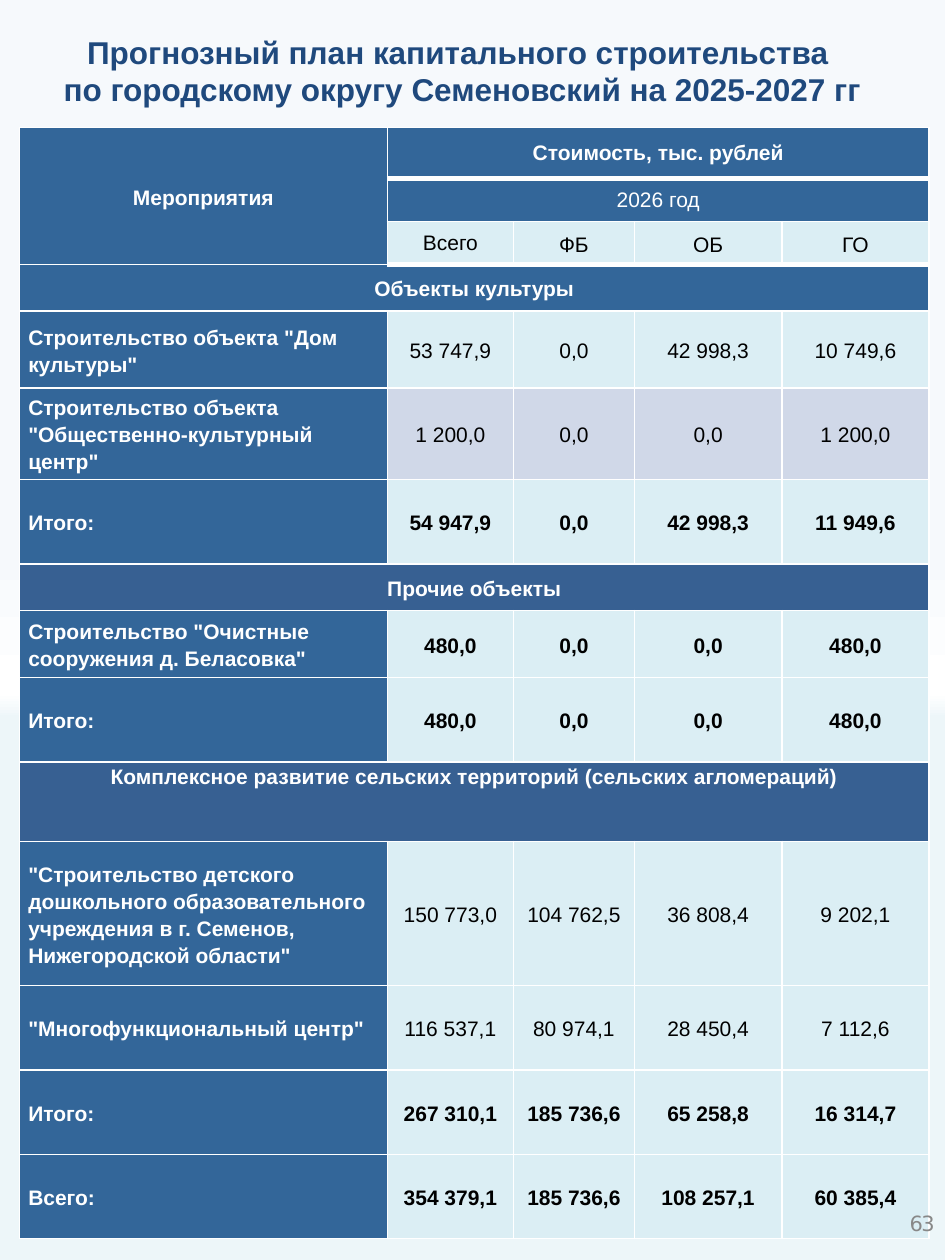
"""Builds the 2026 capital construction plan slide with its cost table."""
from lxml.etree import SubElement
from pptx import Presentation
from pptx.dml.color import RGBColor
from pptx.enum.text import MSO_ANCHOR, MSO_AUTO_SIZE, PP_ALIGN
from pptx.oxml import parse_xml
from pptx.oxml.ns import nsdecls, qn
from pptx.util import Cm, Pt

NAVY = RGBColor(0x1F, 0x49, 0x7D)
BLUE = RGBColor(0x33, 0x66, 0x99)
STEEL = RGBColor(0x37, 0x60, 0x92)
AQUA = RGBColor(0xDB, 0xEE, 0xF4)
LILAC = RGBColor(0xD0, 0xD8, 0xE8)
GREY = RGBColor(0x88, 0x88, 0x88)
WHITE = RGBColor(0xFF, 0xFF, 0xFF)
BLACK = RGBColor(0, 0, 0)

TITLE = ["Прогнозный план капитального строительства ",
         "по городскому округу Семеновский на 2025-2027 гг"]
PAGE = "63"
STOPS = [(21, "F6F9FC"), (43, "F6F9FC"), (55, "FFFFFF"), (57, "EDF6F9"), (95, "EDF6F9")]

SUBHEADS = ["Всего", "ФБ", "ОБ", "ГО"]
SECTIONS = [
    ("Объекты культуры", BLUE, MSO_ANCHOR.MIDDLE, [
        ('Строительство объекта "Дом культуры"',
         (53747.9, 0, 42998.3, 10749.6), False, AQUA),
        ('Строительство объекта "Общественно-культурный центр"',
         (1200, 0, 0, 1200), False, LILAC),
        ("Итого:", (54947.9, 0, 42998.3, 11949.6), True, AQUA),
    ]),
    ("Прочие объекты", STEEL, MSO_ANCHOR.MIDDLE, [
        ('Строительство "Очистные сооружения д. Беласовка"',
         (480, 0, 0, 480), True, AQUA),
        ("Итого:", (480, 0, 0, 480), True, AQUA),
    ]),
    ("Комплексное развитие сельских территорий (сельских агломераций)",
     STEEL, MSO_ANCHOR.TOP, [
        ('"Строительство детского дошкольного образовательного учреждения '
         'в г. Семенов, Нижегородской области"',
         (150773, 104762.5, 36808.4, 9202.1), False, AQUA),
        ('"Многофункциональный центр"',
         (116537.1, 80974.1, 28450.4, 7112.6), False, AQUA),
        ("Итого:", (267310.1, 185736.6, 65258.8, 16314.7), True, AQUA),
        ("Всего:", (354379.1, 185736.6, 108257.1, 60385.4), True, AQUA),
    ]),
]
COLS = [7.42, 2.54, 2.44, 2.97, 2.97]
ROWS = [1.03, 0.87, 0.86, 0.94, 1.55, 1.85, 1.7, 0.94, 1.35, 1.7, 1.6, 2.91, 1.7, 1.7, 1.7]
HEAD_ROWS = 3


def set_font(r, **values):
    color = values.pop("color")
    for name, value in values.items():
        setattr(r.font, name, value)
    r.font.color.rgb = color


def set_frame(tf, **values):
    for name, value in values.items():
        setattr(tf, name, value)


def amount(value):
    return f"{value:,.1f}".replace(",", chr(160)).replace(".", ",")


def set_borders(cell, bottom):
    tcPr = cell._tc.get_or_add_tcPr()
    for i, side in enumerate("LRTB"):
        width = bottom if side == "B" else 1
        tcPr.insert(i, parse_xml(
            f'<a:ln{side} {nsdecls("a")} w="{Pt(width)}"><a:solidFill>'
            f'<a:srgbClr val="{WHITE}"/></a:solidFill></a:ln{side}>'))


def fill_cell(cell, text, fill, color=WHITE, bold=True, align=PP_ALIGN.CENTER,
              anchor=MSO_ANCHOR.MIDDLE, spacing=1.15, inset=0.18):
    cell.fill.solid()
    cell.fill.fore_color.rgb = fill
    set_frame(cell, margin_left=Cm(inset), margin_right=Cm(inset),
              margin_top=0, margin_bottom=0, vertical_anchor=anchor)
    p = cell.text_frame.paragraphs[0]
    p.alignment, p.line_spacing = align, spacing
    r = p.add_run()
    r.text = text
    set_font(r, name="Arial", size=Pt(12), bold=bold, color=color)


def add_background(s):
    s.background.fill.gradient()
    grad = s.background._cSld.find(".//" + qn("a:gradFill"))
    for child in list(grad):
        grad.remove(child)
    stops = SubElement(grad, qn("a:gsLst"))
    for pos, color in STOPS:
        gs = SubElement(stops, qn("a:gs"), pos=str(pos * 1000))
        SubElement(gs, qn("a:srgbClr"), val=color)
    SubElement(grad, qn("a:lin"), ang="5400000", scaled="0")


def add_title(s):
    sp = s.shapes.title
    sp.left, sp.top, sp.width, sp.height = Cm(-1.32), Cm(0.53), Cm(20.04), Cm(1.8)
    tf = sp.text_frame
    set_frame(tf, word_wrap=True, auto_size=MSO_AUTO_SIZE.NONE,
              vertical_anchor=MSO_ANCHOR.TOP)
    for i, line in enumerate(TITLE):
        p = tf.add_paragraph() if i else tf.paragraphs[0]
        p.alignment = PP_ALIGN.CENTER
        p._p.get_or_add_pPr().set("indent", str(Cm(1.24)))
        r = p.add_run()
        r.text = line
        set_font(r, name="Arial", size=Pt(18), bold=True, color=NAVY)


def add_plan(s):
    sp = s.shapes.add_table(len(ROWS), len(COLS), Cm(0.39), Cm(2.57),
                            Cm(sum(COLS)), Cm(sum(ROWS)))
    table = sp.table
    table.first_row = table.horz_banding = False
    for col, width in zip(table.columns, COLS):
        col.width = Cm(width)
    for row, height in zip(table.rows, ROWS):
        row.height = Cm(height)
    for y in range(len(ROWS)):
        for x in range(len(COLS)):
            set_borders(table.cell(y, x), 3 if y == 2 or (y == 0 and x) else 1)

    last = len(COLS) - 1
    table.cell(0, 0).merge(table.cell(HEAD_ROWS - 1, 0))
    fill_cell(table.cell(0, 0), "Мероприятия", BLUE, inset=0.08)
    for y, (text, bold) in enumerate([("Стоимость, тыс. рублей", True), ("2026 год", False)]):
        table.cell(y, 1).merge(table.cell(y, last))
        fill_cell(table.cell(y, 1), text, BLUE, bold=bold, spacing=1.0, inset=0.08)
    for x, text in enumerate(SUBHEADS, 1):
        fill_cell(table.cell(2, x), text, AQUA, BLACK, False,
                  spacing=1.0 if x == 1 else 1.15, inset=0.08)

    y = HEAD_ROWS
    for heading, fill, anchor, items in SECTIONS:
        table.cell(y, 0).merge(table.cell(y, last))
        fill_cell(table.cell(y, 0), heading, fill, anchor=anchor)
        for y, (name, values, bold, tint) in enumerate(items, y + 1):
            fill_cell(table.cell(y, 0), name, BLUE, align=PP_ALIGN.LEFT)
            for x, value in enumerate(values, 1):
                fill_cell(table.cell(y, x), amount(value), tint, BLACK, bold)
        y += 1


def add_page_number(s):
    sp = s.shapes.add_textbox(Cm(18.19), Cm(24.41), Cm(0.79), Cm(0.64))
    tf = sp.text_frame
    set_frame(tf, word_wrap=True, margin_left=Cm(0.15), margin_right=0,
              margin_top=0, margin_bottom=0)
    r = tf.paragraphs[0].add_run()
    r.text = PAGE
    set_font(r, name="DejaVu Sans", size=Pt(12), color=GREY)
    r._r.get_or_add_rPr().set("spc", "-100")


def main():
    prs = Presentation()
    prs.slide_width, prs.slide_height = Cm(19.05), Cm(25.4)
    s = prs.slides.add_slide(prs.slide_layouts[5])
    add_background(s)
    add_title(s)
    add_plan(s)
    add_page_number(s)
    prs.save("out.pptx")


if __name__ == "__main__":
    main()
